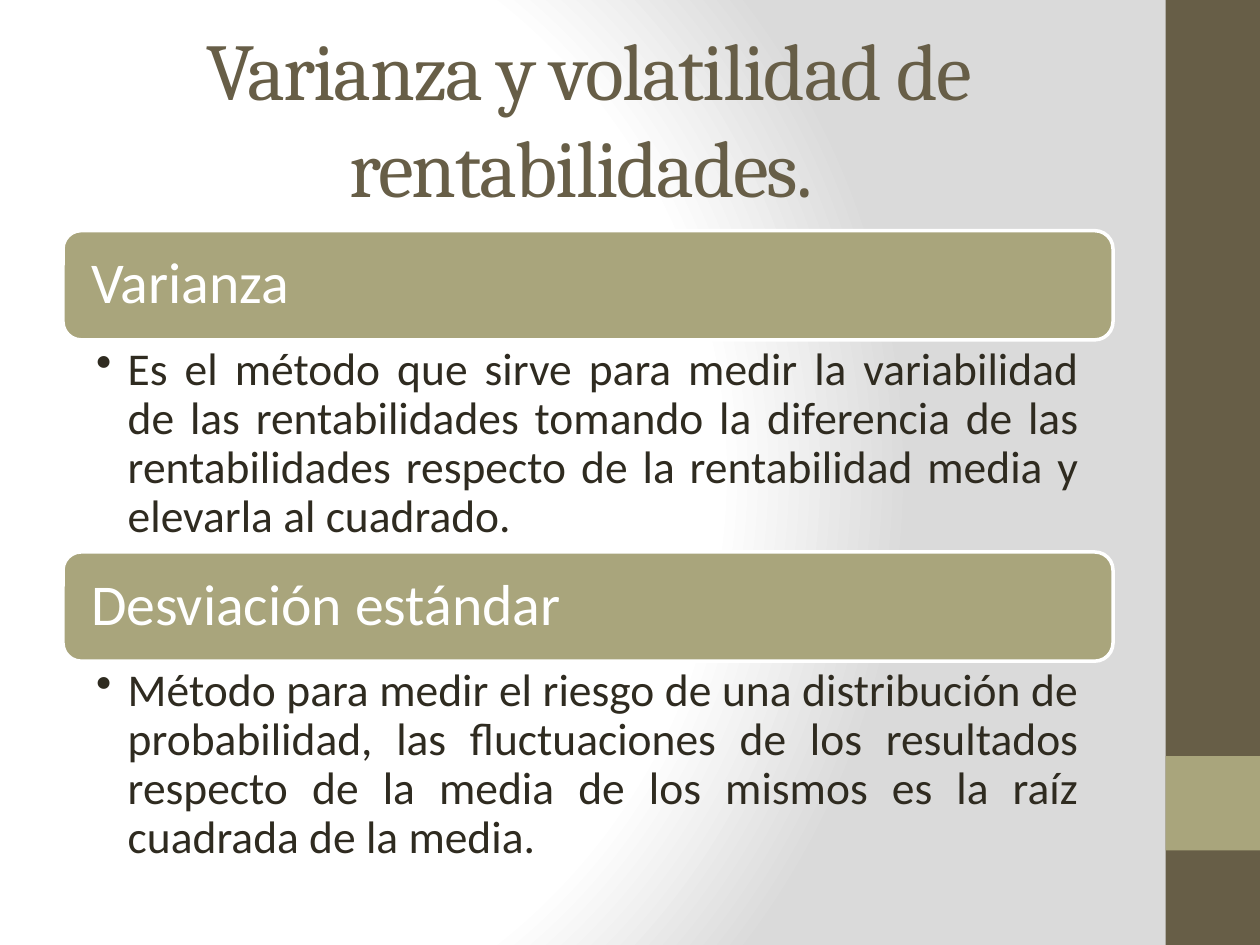
from pptx import Presentation
from pptx.dml.color import RGBColor
from pptx.enum.shapes import MSO_SHAPE as Shape
from pptx.enum.text import MSO_ANCHOR as Anchor, MSO_AUTO_SIZE as AutoSize, PP_ALIGN as Align
from pptx.oxml import parse_xml
from pptx.oxml.ns import nsdecls, qn
from pptx.util import Pt

BROWN, OLIVE, WHITE, DARK = "675E47", "A9A57C", "FFFFFF", "2F2B20"
LEFT, WIDTH = 36, 600
SECTION_TOP, SECTION_PITCH = 131.8, 183.6
BAR_HEIGHT, BODY_HEIGHT = 62.4, 121

SECTIONS = [
    ("Varianza",
     "Es el método que sirve para medir la variabilidad de las rentabilidades "
     "tomando la diferencia de las rentabilidades respecto de la rentabilidad "
     "media y elevarla al cuadrado."),
    ("Desviación estándar",
     "Método para medir el riesgo de una distribución de probabilidad, las "
     "fluctuaciones de los resultados respecto de la media de los mismos es la "
     "raíz cuadrada de la media. "),
]


def style(paragraph, name, size, color, align):
    paragraph.alignment = align
    font = paragraph.font
    font.name, font.size = name, Pt(size)
    font.color.rgb = RGBColor.from_string(color)


def add_box(kind, left, top, width, height, fill):
    shape = slide.shapes.add_shape(kind, Pt(left), Pt(top), Pt(width), Pt(height))
    shape.shadow.inherit = False
    shape.fill.solid()
    shape.fill.fore_color.rgb = RGBColor.from_string(fill)
    shape.line.fill.background()
    return shape


presentation = Presentation()
presentation.slide_width, presentation.slide_height = Pt(720), Pt(540)
slide = presentation.slides.add_slide(presentation.slide_layouts[5])

# Background: radial gradient from white to grey
slide.background.fill.gradient()
gradient = slide.element.find(".//" + qn("a:gradFill"))
stops = "".join(
    f'<a:gs pos="{position * 1000}"><a:srgbClr val="{color}"/></a:gs>'
    for position, color in [(0, WHITE), (75, WHITE), (100, "DADADA")])
gradient.getparent().replace(gradient, parse_xml(
    f'<a:gradFill {nsdecls("a")} rotWithShape="1"><a:gsLst>{stops}</a:gsLst>'
    '<a:path path="circle"><a:fillToRect l="20000" t="50000" r="100000" b="50000"/>'
    '</a:path></a:gradFill>'))

# Side band with accent square
add_box(Shape.RECTANGLE, 666, 0, 54, 540, BROWN)
add_box(Shape.RECTANGLE, 666, 432, 54, 54, OLIVE)

# Title
title = slide.shapes.title
title.left, title.top, title.width, title.height = Pt(LEFT), Pt(21.6), Pt(WIDTH), Pt(90)
title.text_frame.text = "Varianza y volatilidad de rentabilidades. "
title.text_frame.auto_size = AutoSize.NONE
title.text_frame.vertical_anchor = Anchor.MIDDLE
paragraph = title.text_frame.paragraphs[0]
style(paragraph, "Cambria", 46, BROWN, Align.CENTER)
paragraph._p.pPr.find(qn("a:defRPr")).set("spc", "-100")

# Sections: heading bar with a bulleted definition below
for index, (heading, definition) in enumerate(SECTIONS):
    top = SECTION_TOP + index * SECTION_PITCH
    bar = add_box(Shape.ROUNDED_RECTANGLE, LEFT, top, WIDTH, BAR_HEIGHT, OLIVE)
    bar.line.color.rgb = RGBColor.from_string(WHITE)
    bar.line.width = Pt(2)
    frame = bar.text_frame
    frame.margin_left = frame.margin_right = Pt(13)
    frame.vertical_anchor = Anchor.MIDDLE
    frame.text = heading
    paragraph = frame.paragraphs[0]
    paragraph.line_spacing = 0.9
    style(paragraph, "Calibri", 33, WHITE, Align.LEFT)

    body = slide.shapes.add_textbox(
        Pt(LEFT), Pt(top + BAR_HEIGHT), Pt(WIDTH), Pt(BODY_HEIGHT))
    frame = body.text_frame
    frame.word_wrap = True
    frame.margin_left = frame.margin_right = Pt(19)
    frame.text = definition
    paragraph = frame.paragraphs[0]
    paragraph.level = 1
    paragraph.line_spacing = 0.9
    properties = paragraph._p.get_or_add_pPr()
    properties.set("marL", str(Pt(18)))
    properties.set("indent", str(-Pt(18)))
    properties.append(parse_xml(f'<a:buChar {nsdecls("a")} char="•"/>'))
    style(paragraph, "Calibri", 26, DARK, Align.JUSTIFY)

presentation.save("out.pptx")
